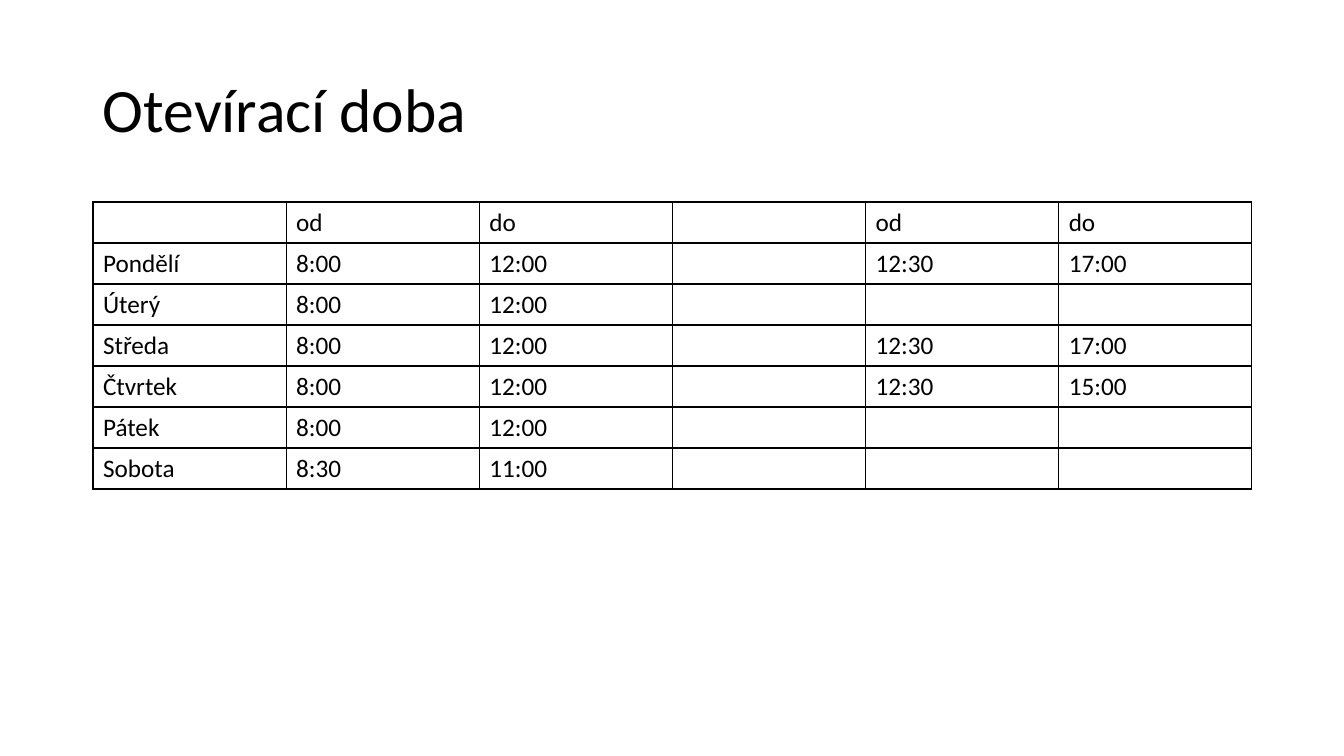
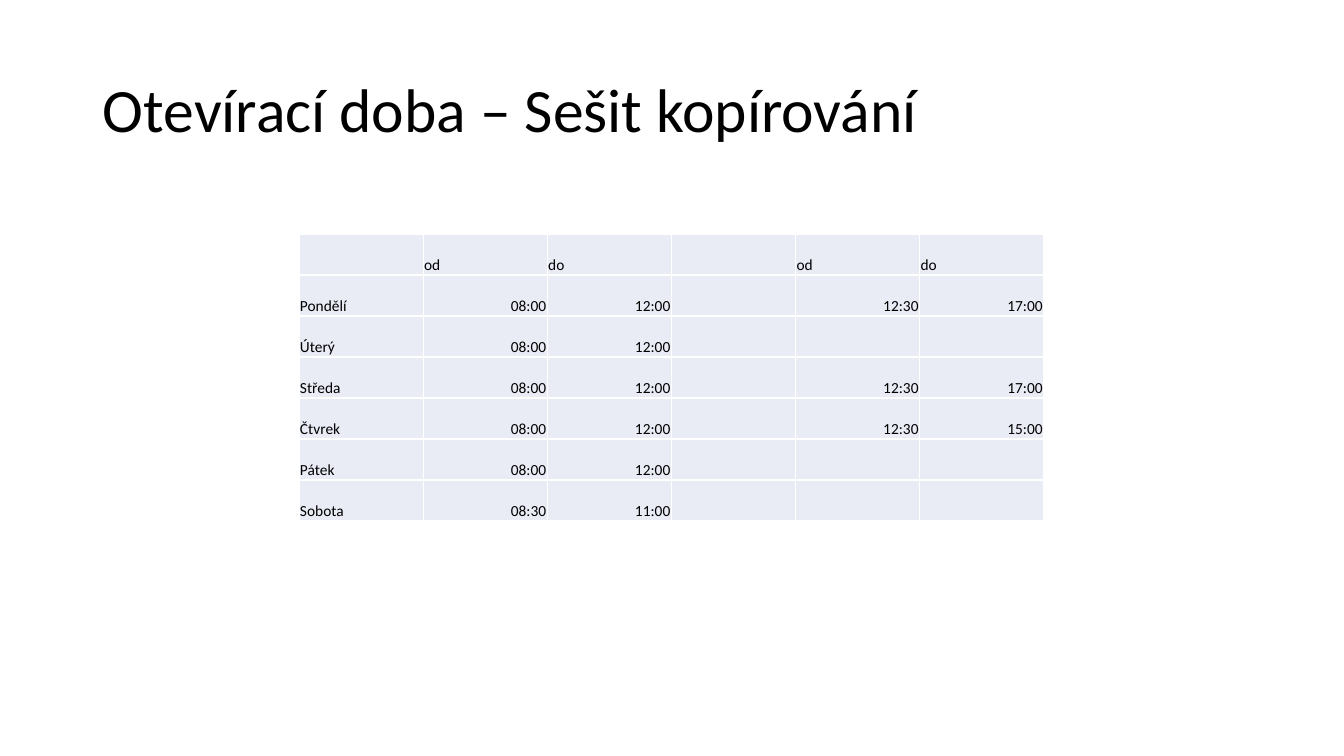
from lxml.etree import SubElement
from pptx import Presentation
from pptx.dml.color import RGBColor
from pptx.enum.text import MSO_ANCHOR, PP_ALIGN
from pptx.oxml.ns import qn
from pptx.util import Pt

FONT = "Calibri"
BLACK, WHITE, PALE = "000000", "FFFFFF", "E9EBF5"
ROW_H = 41

HEADER = ["", "od", "do", "", "od", "do"]
HOURS = [
    ("8:00", "12:00", "", "12:30", "17:00"),
    ("8:00", "12:00", "", "", ""),
    ("8:00", "12:00", "", "12:30", "17:00"),
    ("8:00", "12:00", "", "12:30", "15:00"),
    ("8:00", "12:00", "", "", ""),
    ("8:30", "11:00", "", "", ""),
]
SLIDES = [
    dict(title="Otevírací doba",
         days=["Pondělí", "Úterý", "Středa", "Čtvrtek", "Pátek", "Sobota"],
         left=93, top=202, width=1159, size=18, border=BLACK, sheet=False),
    dict(title="Otevírací doba – Sešit kopírování",
         days=["Pondělí", "Úterý", "Středa", "Čtvrek", "Pátek", "Sobota"],
         left=299, top=234, width=745, size=11, border=WHITE, sheet=True),
]


def px(n):
    return round(n * 914400 / 100.8)


def rgb(color):
    return RGBColor.from_string(color)


def format_runs(p, size):
    for r in p.runs:
        r.font.name, r.font.size = FONT, Pt(size)
        r.font.color.rgb = rgb(BLACK)


def add_title(s, text):
    tf = s.shapes.add_textbox(px(93), px(40), px(1159), px(146)).text_frame
    tf.word_wrap = True
    tf.vertical_anchor = MSO_ANCHOR.MIDDLE
    p = tf.paragraphs[0]
    p.text, p.line_spacing = text, 0.9
    format_runs(p, 44)


def add_borders(cell, color):
    tc_pr = cell._tc.get_or_add_tcPr()
    for side in ("lnL", "lnR", "lnT", "lnB"):
        ln = SubElement(tc_pr, qn(f"a:{side}"), w=str(Pt(1)))
        fill = SubElement(ln, qn("a:solidFill"))
        SubElement(fill, qn("a:srgbClr"), val=color)


def style_as_sheet(cell, is_time):
    """Bottom-aligned, tightly set and tinted, with times to the right."""
    cell.fill.solid()
    cell.fill.fore_color.rgb = rgb(PALE)
    cell.vertical_anchor = MSO_ANCHOR.BOTTOM
    cell.margin_left = cell.margin_right = cell.margin_top = px(1)
    cell.margin_bottom = 0
    if is_time:
        cell.text_frame.paragraphs[0].alignment = PP_ALIGN.RIGHT


def add_hours(s, days, left, top, width, size, border, sheet):
    pad = 5 if sheet else 0
    rows = [HEADER] + [[day] + [t and t.zfill(pad) for t in times]
                       for day, times in zip(days, HOURS)]
    table = s.shapes.add_table(len(rows), len(HEADER), px(left), px(top),
                               px(width), px(ROW_H * len(rows))).table
    table.first_row = table.horz_banding = False
    for i, row in enumerate(rows):
        table.rows[i].height = px(ROW_H)
        for j, text in enumerate(row):
            cell = table.cell(i, j)
            cell.text = text
            format_runs(cell.text_frame.paragraphs[0], size)
            add_borders(cell, border)
            if sheet:
                style_as_sheet(cell, i > 0 and j > 0)
            else:
                cell.fill.background()


def main():
    prs = Presentation()
    prs.slide_width, prs.slide_height = px(1344), px(756)
    for content in SLIDES:
        s = prs.slides.add_slide(prs.slide_layouts[6])
        add_title(s, content["title"])
        add_hours(s, **{k: v for k, v in content.items() if k != "title"})
    prs.save("out.pptx")


if __name__ == "__main__":
    main()
